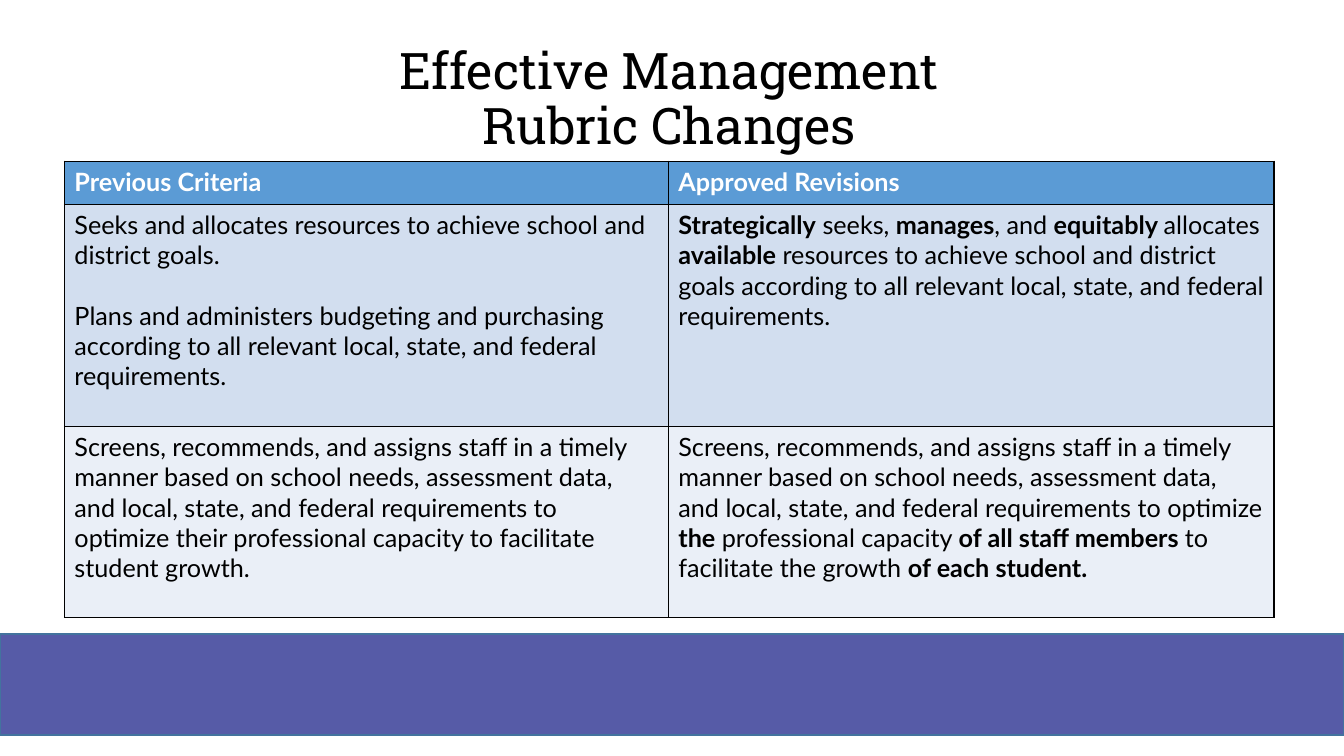
"""Build the Effective Management rubric changes slide."""
from lxml.etree import SubElement
from pptx import Presentation
from pptx.dml.color import RGBColor
from pptx.enum.shapes import MSO_SHAPE
from pptx.enum.text import MSO_ANCHOR, PP_ALIGN
from pptx.oxml.ns import qn
from pptx.util import Pt

TITLE = "Effective Management\nRubric Changes"
HEADERS = ("Previous Criteria", "Approved Revisions")
CRITERIA = [
    (
        [
            "Seeks and allocates resources to achieve school and district goals.",
            "Plans and administers budgeting and purchasing according to all "
            "relevant local, state, and federal requirements.",
        ],
        [
            "*Strategically* seeks, *manages*, and *equitably *allocates "
            "*available* resources to achieve school and district goals "
            "according to all relevant local, state, and federal requirements.",
        ],
    ),
    (
        [
            "Screens, recommends, and assigns staff in a timely manner based on "
            "school needs, assessment data, and local, state, and federal "
            "requirements to optimize their professional capacity to facilitate "
            "student growth.",
        ],
        [
            "Screens, recommends, and assigns staff in a timely manner based on "
            "school needs, assessment data, and local, state, and federal "
            "requirements to optimize *the* professional capacity *of all staff "
            "members *to facilitate the growth *of each student.*",
        ],
    ),
]
ROWS = [tuple([f"*{h}*"] for h in HEADERS), *CRITERIA]

THEME = {
    "title_font": "Roboto Slab", "title_size": Pt(36),
    "body_font": "Lato", "body_size": Pt(18),
    "ink": "000000", "header_ink": "FFFFFF",
    "row_fills": ("5B9BD5", "D2DEEF", "EAEFF7"),
    "footer": "565BA7", "footer_line": "43739E",
}
SLIDE_W, SLIDE_H = Pt(960), Pt(540)
LEFT, WIDTH = Pt(46), Pt(864)
TITLE_TOP, TITLE_H = Pt(28.8), Pt(86.4)
TABLE_TOP = Pt(115.2)
COL_WIDTHS = (Pt(431.4), Pt(432.6))
ROW_HEIGHTS = (Pt(31), Pt(158.6), Pt(136.4))
FOOTER_TOP, FOOTER_H = Pt(453), Pt(72)
PARAGRAPH_GAP = Pt(21.6)


def rgb(name):
    return RGBColor.from_string(name)


def set_font(p, name, size, color):
    p.font.name, p.font.size = name, size
    p.font.color.rgb = rgb(color)


def add_footer(s):
    sp = s.shapes.add_shape(MSO_SHAPE.RECTANGLE, 0, FOOTER_TOP, SLIDE_W, FOOTER_H)
    sp.shadow.inherit = False
    sp.fill.solid()
    sp.fill.fore_color.rgb = rgb(THEME["footer"])
    sp.line.color.rgb = rgb(THEME["footer_line"])
    sp.line.width = Pt(1)


def add_title(s):
    tf = s.shapes.add_textbox(LEFT, TITLE_TOP, WIDTH, TITLE_H).text_frame
    tf.word_wrap = True
    tf.vertical_anchor = MSO_ANCHOR.MIDDLE
    p = tf.paragraphs[0]
    p.text = TITLE.replace("\n", "\v")
    p.alignment, p.line_spacing = PP_ALIGN.CENTER, 0.9
    set_font(p, THEME["title_font"], THEME["title_size"], THEME["ink"])


def add_borders(cell):
    tc_pr = cell._tc.get_or_add_tcPr()
    for side in ("a:lnL", "a:lnR", "a:lnT", "a:lnB"):
        ln = SubElement(tc_pr, qn(side), w=str(Pt(1)))
        fill = SubElement(ln, qn("a:solidFill"))
        SubElement(fill, qn("a:srgbClr"), val=THEME["ink"])


def fill_cell(cell, paragraphs, fill, ink):
    add_borders(cell)
    cell.fill.solid()
    cell.fill.fore_color.rgb = rgb(fill)
    tf = cell.text_frame
    for i, text in enumerate(paragraphs):
        p = tf.add_paragraph() if i else tf.paragraphs[0]
        if i:
            p.space_before = PARAGRAPH_GAP
        set_font(p, THEME["body_font"], THEME["body_size"], ink)
        for j, part in enumerate(text.split("*")):
            if part:
                r = p.add_run()
                r.text, r.font.bold = part, j % 2 == 1


def add_rubric(s):
    table = s.shapes.add_table(len(ROWS), len(HEADERS), LEFT, TABLE_TOP,
                               WIDTH, sum(ROW_HEIGHTS)).table
    for col, width in zip(table.columns, COL_WIDTHS):
        col.width = width
    for i, (row, height) in enumerate(zip(ROWS, ROW_HEIGHTS)):
        table.rows[i].height = height
        ink = THEME["ink" if i else "header_ink"]
        for j, paragraphs in enumerate(row):
            fill_cell(table.cell(i, j), paragraphs, THEME["row_fills"][i], ink)


def main():
    prs = Presentation()
    prs.slide_width, prs.slide_height = SLIDE_W, SLIDE_H
    s = prs.slides.add_slide(prs.slide_layouts[6])
    add_footer(s)
    add_title(s)
    add_rubric(s)
    prs.save("out.pptx")


if __name__ == "__main__":
    main()
